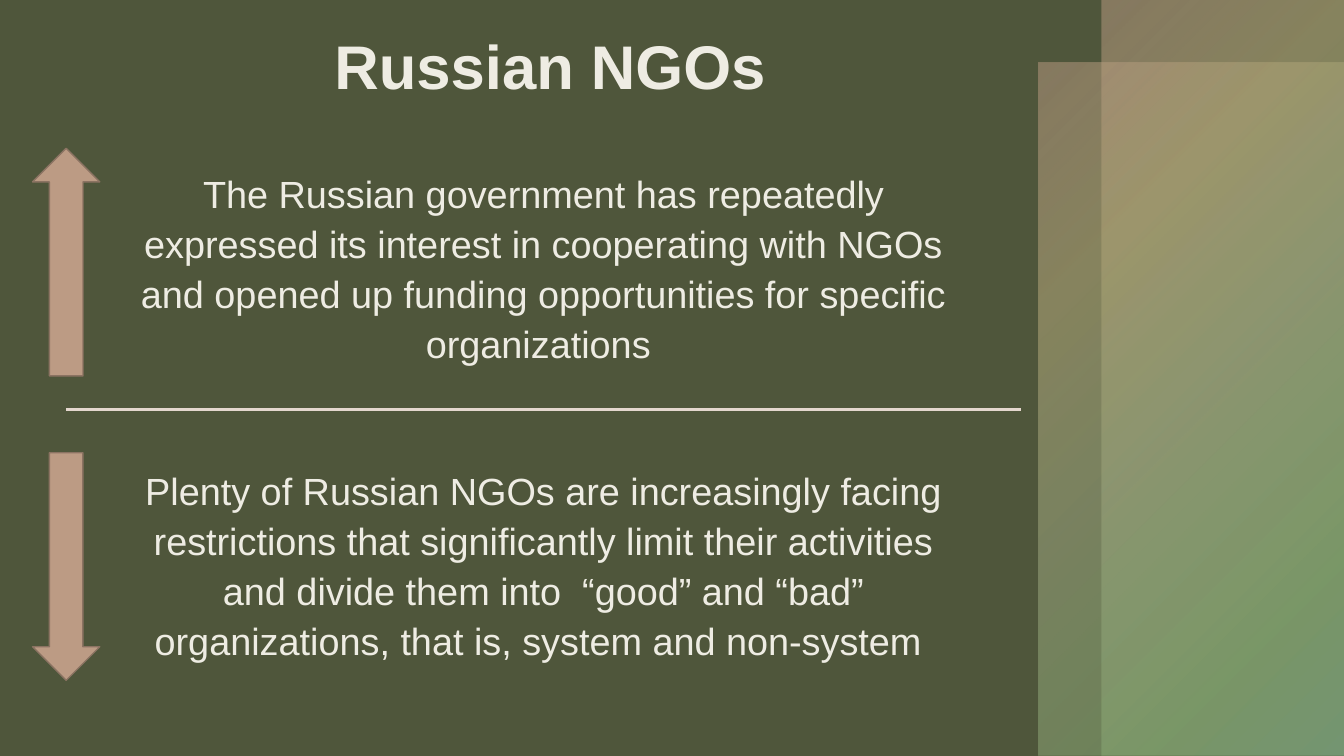
from dataclasses import dataclass

import lxml.etree
import pptx
import pptx.dml.color
import pptx.enum.shapes
import pptx.enum.text
import pptx.oxml
import pptx.oxml.ns
import pptx.util


@dataclass(frozen=True)
class Theme:
    font: str = "Arial"
    background: str = "4F563B"
    text: str = "EEECE3"
    divider: str = "E4D7CE"
    arrow: str = "BC9B84"
    arrow_edge: str = "8B7362"
    title_size: int = 44
    body_size: int = 27
    panel_stops: tuple = (
        (0, "BC9B84", 50),
        (25, "ABA175", 60),
        (50, "9BA57D", 55),
        (81, "88AC75", 50),
        (99, "81AC84", 50),
    )


class SlideBuilder:
    COLUMNS = 64
    ROWS = 36

    def __init__(self, presentation, theme):
        self.theme = theme
        self.column = presentation.slide_width / self.COLUMNS
        self.row = presentation.slide_height / self.ROWS
        self.slide = presentation.slides.add_slide(presentation.slide_layouts[1])
        self.paint(self.slide.background.fill, theme.background)

    def box(self, left, top, width, height):
        return (
            round(left * self.column),
            round(top * self.row),
            round(width * self.column),
            round(height * self.row),
        )

    def paint(self, fill, color):
        fill.solid()
        fill.fore_color.rgb = pptx.dml.color.RGBColor.from_string(color)

    def set_text(self, shape, text, size, bold=False):
        frame = shape.text_frame
        frame.word_wrap = True
        frame.auto_size = pptx.enum.text.MSO_AUTO_SIZE.NONE
        frame.vertical_anchor = pptx.enum.text.MSO_ANCHOR.TOP
        frame.text = text
        paragraph = frame.paragraphs[0]
        paragraph.alignment = pptx.enum.text.PP_ALIGN.CENTER
        font = paragraph.font
        font.name = self.theme.font
        font.size = pptx.util.Pt(size)
        font.bold = bold
        self.paint(font.fill, self.theme.text)
        return paragraph

    def place(self, shape, *cells):
        shape.left, shape.top, shape.width, shape.height = self.box(*cells)

    def title(self, text, *cells):
        shape = self.slide.shapes.title
        self.place(shape, *cells)
        self.set_text(shape, text, self.theme.title_size, bold=True)

    def statement(self, text, *cells, placeholder=None):
        shape = placeholder or self.slide.shapes.add_textbox(*self.box(*cells))
        self.place(shape, *cells)
        paragraph = self.set_text(shape, text, self.theme.body_size)
        paragraph.line_spacing = 1.1
        paragraph.space_before = pptx.util.Pt(12)
        if placeholder is not None:
            properties = paragraph._p.get_or_add_pPr()
            properties.set("marL", "0")
            properties.set("indent", "0")
            bullet = pptx.oxml.parse_xml(f"<a:buNone {pptx.oxml.ns.nsdecls('a')}/>")
            properties.find(pptx.oxml.ns.qn("a:spcBef")).addnext(bullet)

    def shape(self, kind, *cells):
        shape = self.slide.shapes.add_shape(kind, *self.box(*cells))
        shape.shadow.inherit = False
        return shape

    def panel(self, left, top):
        panel = self.shape(
            pptx.enum.shapes.MSO_SHAPE.RECTANGLE,
            left, top, self.COLUMNS - left, self.ROWS - top,
        )
        panel.line.fill.background()
        panel.fill.background()
        stops = "".join(
            f'<a:gs pos="{position * 1000}"><a:srgbClr val="{color}">'
            f'<a:alpha val="{alpha * 1000}"/></a:srgbClr></a:gs>'
            for position, color, alpha in self.theme.panel_stops
        )
        gradient = pptx.oxml.parse_xml(
            f'<a:gradFill {pptx.oxml.ns.nsdecls("a")} rotWithShape="1">'
            f'<a:gsLst>{stops}</a:gsLst><a:path path="circle">'
            '<a:fillToRect r="100000" b="100000"/></a:path></a:gradFill>'
        )
        properties = panel._element.spPr
        properties.replace(properties.find(pptx.oxml.ns.qn("a:noFill")), gradient)

    def arrow(self, *cells, rotation=0):
        arrow = self.shape(pptx.enum.shapes.MSO_SHAPE.DOWN_ARROW, *cells)
        arrow.rotation = rotation
        self.paint(arrow.fill, self.theme.arrow)
        self.paint(arrow.line.fill, self.theme.arrow_edge)
        arrow.line.width = pptx.util.Pt(1)

    def divider(self, start, end, row):
        left, top, length, _ = self.box(start, row, end - start, 0)
        line = self.slide.shapes.add_connector(
            pptx.enum.shapes.MSO_CONNECTOR.STRAIGHT, left, top, left + length, top
        )
        self.paint(line.line.fill, self.theme.divider)
        line.line.width = pptx.util.Pt(2.25)
        lxml.etree.SubElement(line._element.spPr, pptx.oxml.ns.qn("a:effectLst"))


def main():
    presentation = pptx.Presentation()
    presentation.slide_width = pptx.util.Inches(13.33)
    presentation.slide_height = pptx.util.Inches(7.5)
    builder = SlideBuilder(presentation, Theme())

    text_left, text_width, text_height = 5.28, 41.2, 11.8
    arrow_left, arrow_width, arrow_height = 1.55, 3.2, 10.84

    builder.panel(49.44, 3)
    builder.panel(52.44, 0)
    builder.title("Russian NGOs", 5.6, 1.1, text_width, 8.16)
    builder.statement(
        "The Russian government has repeatedly expressed its interest in "
        "cooperating with NGOs and opened up funding opportunities for "
        "specific organizations ",
        text_left, 7.68, text_width, text_height,
        placeholder=builder.slide.placeholders[1],
    )
    builder.statement(
        "Plenty of Russian NGOs are increasingly facing restrictions that "
        "significantly limit their activities and divide them into  “good” "
        "and “bad” organizations, that is, system and non-system ",
        text_left, 21.84, text_width, text_height,
    )
    builder.divider(arrow_left + arrow_width / 2, 48.6, 19.5)
    for top, rotation in ((7.06, 180), (21.56, 0)):
        builder.arrow(arrow_left, top, arrow_width, arrow_height, rotation=rotation)

    presentation.save("out.pptx")


if __name__ == "__main__":
    main()
